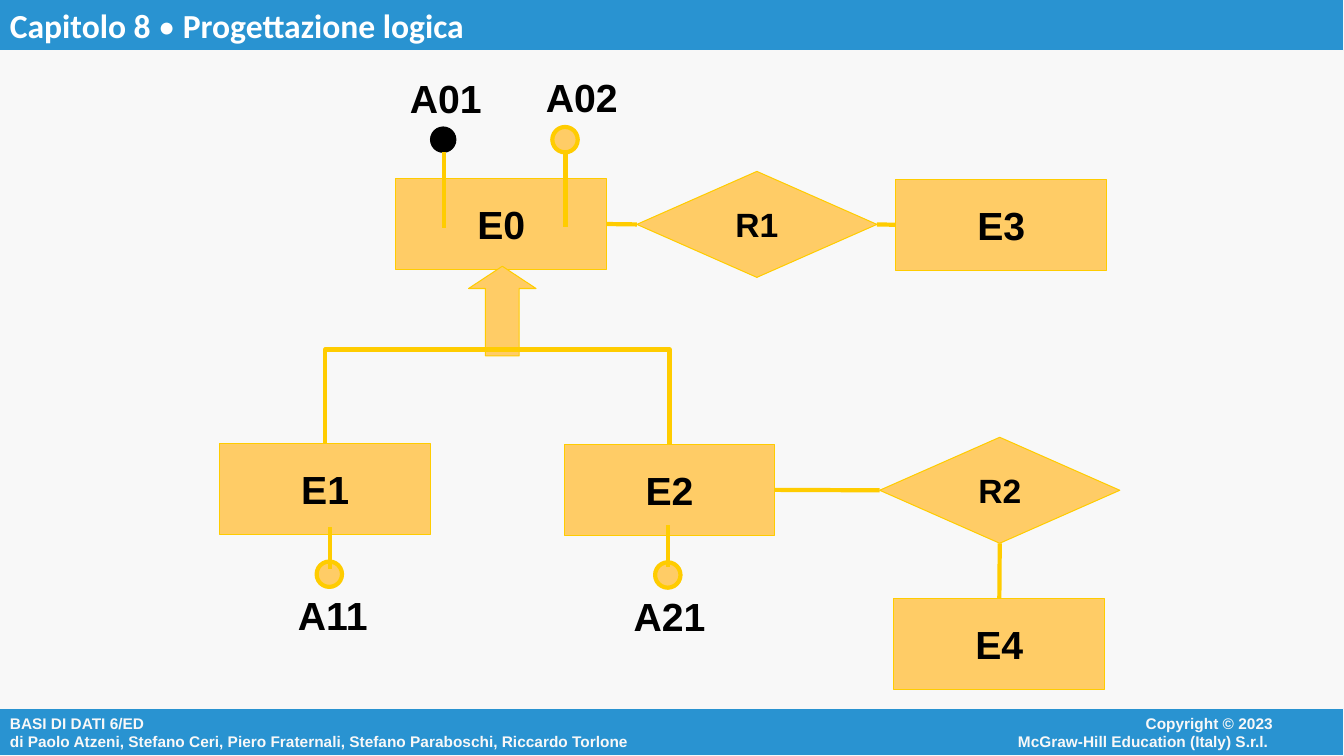
"""Build the slide with an entity-relationship schema containing a generalization."""
import pptx
import pptx.chart
import pptx.dml.color
import pptx.enum.shapes
import pptx.enum.text
import pptx.oxml
import pptx.util

Cm = pptx.util.Cm
Pt = pptx.util.Pt
SHAPE = pptx.enum.shapes.MSO_SHAPE
ALIGN = pptx.enum.text.PP_ALIGN
ANCHOR = pptx.enum.text.MSO_ANCHOR
COLORS = {
    name: pptx.dml.color.RGBColor.from_string(value)
    for name, value in {
        "paper": "F8F8F8", "bar": "2993D1", "white": "FFFFFF",
        "amber": "FFCC66", "gold": "FFCC00", "black": "000000",
    }.items()
}
TOP, LEFT, BOTTOM, RIGHT = range(4)


def paint(shape, fill, line, width):
    shape.shadow.inherit = False
    shape.fill.solid()
    shape.fill.fore_color.rgb = COLORS[fill]
    shape.line.color.rgb = COLORS[line]
    shape.line.width = Pt(width)


def write(shape, text, size, color, align, anchor, wrap):
    frame = shape.text_frame
    frame.text = text
    frame.word_wrap = wrap
    frame.vertical_anchor = anchor
    for paragraph in frame.paragraphs:
        paragraph.alignment = align
        for run in paragraph.runs:
            run.font.name = "Arial"
            run.font.size = Pt(size)
            run.font.bold = True
            run.font.color.rgb = COLORS[color]


presentation = pptx.Presentation()
presentation.slide_width = Cm(33.87)
presentation.slide_height = Cm(19.05)
slide = presentation.slides.add_slide(presentation.slide_layouts[6])
slide.background.fill.solid()
slide.background.fill.fore_color.rgb = COLORS["paper"]
shapes = slide.shapes

book = shapes.add_shape(SHAPE.RECTANGLE, 0, Cm(17.86), presentation.slide_width, Cm(1.19))
paint(book, "bar", "paper", 0.75)
write(book, "BASI DI DATI 6/ED\ndi Paolo Atzeni, Stefano Ceri, Piero Fraternali, "
      "Stefano Paraboschi, Riccardo Torlone", 11, "paper", ALIGN.LEFT, ANCHOR.MIDDLE, True)
rights = shapes.add_textbox(Cm(22.58), Cm(17.86), Cm(9.75), Cm(1.17))
write(rights, "Copyright © 2023\nMcGraw-Hill Education (Italy) S.r.l. ", 11, "paper",
      ALIGN.RIGHT, ANCHOR.TOP, True)

chapter = shapes.add_shape(SHAPE.RECTANGLE, 0, 0, presentation.slide_width, Cm(1.27))
paint(chapter, "bar", "paper", 0)
chapter.text_frame.vertical_anchor = ANCHOR.TOP
chapter_line = chapter.text_frame.paragraphs[0]
chapter_line.alignment = ALIGN.LEFT
for words, bold in [("Capitolo 8 ", True), ("•", False), (" Progettazione logica", True)]:
    run = chapter_line.add_run()
    run.text = words
    run.font.name = "Calibri"
    run.font.size = Pt(24)
    run.font.bold = bold
    run.font.color.rgb = COLORS["white"]

nodes = {}
for name, left, top in [
    ("E0", 9.98, 4.5), ("E1", 5.54, 11.18), ("E2", 14.22, 11.2), ("E3", 22.58, 4.52),
    ("E4", 22.53, 15.09), ("R1", 16.05, 4.32), ("R2", 22.17, 11.02),
]:
    if name.startswith("E"):
        kind, width, height, size = SHAPE.RECTANGLE, 5.31, 2.29, 28
    else:
        kind, width, height, size = SHAPE.DIAMOND, 6.05, 2.67, 24
    nodes[name] = shapes.add_shape(kind, Cm(left), Cm(top), Cm(width), Cm(height))
    paint(nodes[name], "amber", "gold", 0.75)
    write(nodes[name], name, size, "black", ALIGN.CENTER, ANCHOR.MIDDLE, False)

lines = []
for start, start_side, end, end_side in [
    ("E0", RIGHT, "R1", LEFT), ("R1", RIGHT, "E3", LEFT),
    ("E2", RIGHT, "R2", LEFT), ("R2", BOTTOM, "E4", TOP),
]:
    link = shapes.add_connector(pptx.enum.shapes.MSO_CONNECTOR.STRAIGHT, 0, 0, 0, 0)
    link.begin_connect(nodes[start], start_side)
    link.end_connect(nodes[end], end_side)
    lines.append(link)

generalization = shapes.add_shape(SHAPE.UP_ARROW, Cm(11.81), Cm(6.71), Cm(1.7), Cm(2.26))
generalization.adjustments[1] = 0.33
paint(generalization, "amber", "gold", 0.75)

parent_bar = Cm(8.81)
child_tops = [(nodes[name].left + nodes[name].width // 2, nodes[name].top) for name in ("E1", "E2")]
(first_x, first_y), (second_x, second_y) = child_tops
builder = shapes.build_freeform(first_x, first_y)
builder.add_line_segments(
    [(first_x, parent_bar), (second_x, parent_bar), (second_x, second_y)], close=False)
fork = builder.convert_to_shape()
fork.shadow.inherit = False
fork.fill.background()
fork.line.color.rgb = COLORS["gold"]
fork.line.width = Pt(3)

for name, x, stem_top, stem_bottom, circle_top, label_left, label_top in [
    ("A01", 11.18, 3.84, 5.74, 3.2, 10.08, 1.75),
    ("A02", 14.25, 3.81, 5.72, 3.2, 13.51, 1.73),
    ("A11", 8.31, 13.28, 14.35, 14.15, 7.26, 14.78),
    ("A21", 16.84, 13.23, 14.3, 14.17, 15.72, 14.81),
]:
    circle = shapes.add_shape(SHAPE.OVAL, Cm(x - 0.33), Cm(circle_top), Cm(0.64), Cm(0.64))
    if name == "A01":
        paint(circle, "black", "black", 0.75)
    else:
        paint(circle, "amber", "gold", 3)
    lines.append(shapes.add_connector(
        pptx.enum.shapes.MSO_CONNECTOR.STRAIGHT, Cm(x), Cm(stem_top), Cm(x), Cm(stem_bottom)))
    label = shapes.add_textbox(Cm(label_left), Cm(label_top), Cm(2.31), Cm(1.42))
    write(label, name, 28, "black", ALIGN.LEFT, ANCHOR.TOP, False)

for line in lines:
    line.line.color.rgb = COLORS["gold"]
    line.line.width = Pt(3)
    line._element.spPr.append(pptx.oxml.parse_xml(
        '<a:effectLst xmlns:a="http://schemas.openxmlformats.org/drawingml/2006/main"/>'))

presentation.save("out.pptx")
